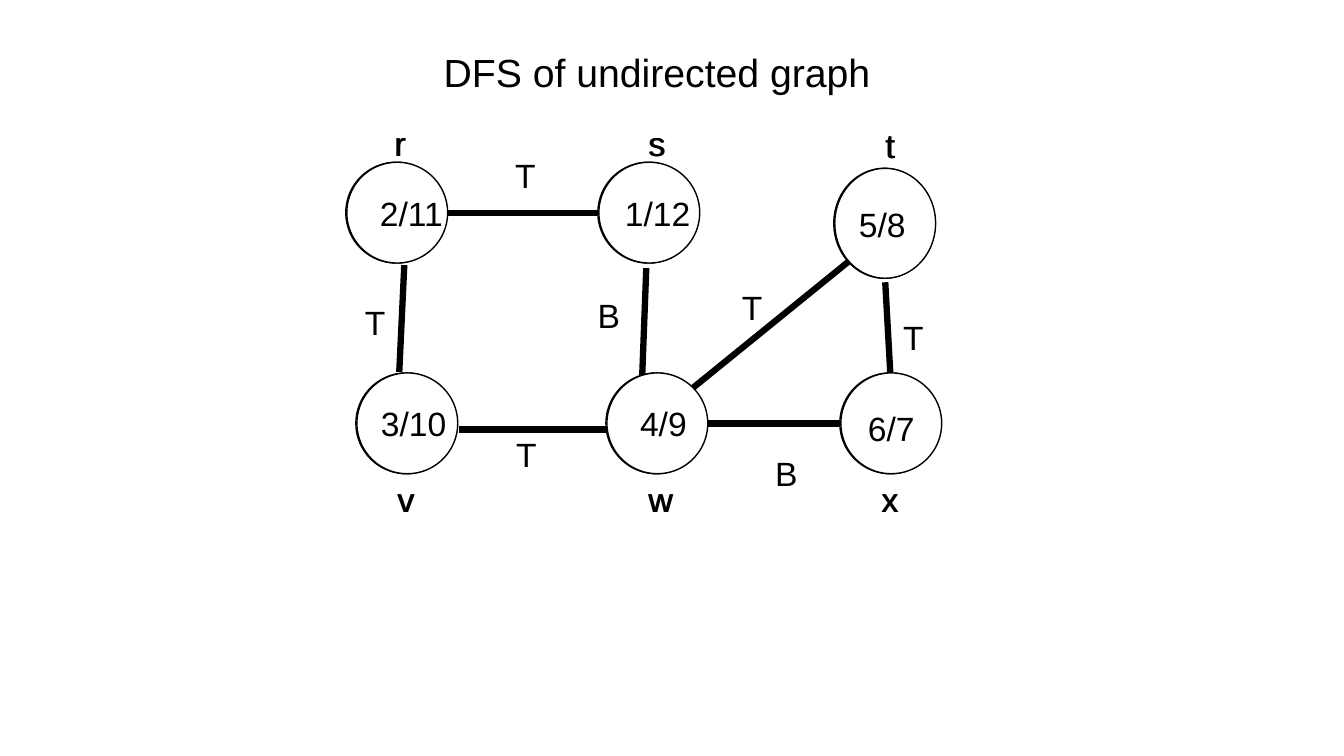
import pptx
import pptx.dml.color
import pptx.enum.shapes
import pptx.enum.text
import pptx.oxml.ns
import pptx.util
from lxml import etree

Inches, Pt = pptx.util.Inches, pptx.util.Pt
COLORS = {"ink": "000000", "paper": "FFFFFF"}
INK = pptx.dml.color.RGBColor.from_string(COLORS["ink"])
PAPER = pptx.dml.color.RGBColor.from_string(COLORS["paper"])

prs = pptx.Presentation()
prs.slide_width, prs.slide_height = Inches(13.33), Inches(7.5)
s = prs.slides.add_slide(prs.slide_layouts[5])
s.background.fill.solid()
s.background.fill.fore_color.rgb = PAPER


def set_text(sp, text, size):
    tf = sp.text_frame
    tf.text = text
    tf.word_wrap = False
    tf.auto_size = pptx.enum.text.MSO_AUTO_SIZE.SHAPE_TO_FIT_TEXT
    tf.vertical_anchor = pptx.enum.text.MSO_ANCHOR.TOP
    p = tf.paragraphs[0]
    p.alignment = pptx.enum.text.PP_ALIGN.LEFT
    r = p.runs[0]
    r.font.size, r.font.name, r.font.color.rgb = Pt(size), "Arial", INK


def add_label(text, x, y, w):
    set_text(s.shapes.add_textbox(Inches(x), Inches(y), Inches(w), Inches(0.5)), text, 24)


# Title
title = s.shapes.title
title.left, title.top = Inches(4.3), Inches(0.43)
title.width, title.height = Inches(4.49), Inches(0.57)
set_text(title, "DFS of undirected graph", 28)

# Edges: start, end, type (T tree, B back), label position
edges = [
    (4.43, 2.11, 5.92, 2.11, "T", 5.01, 1.49),
    (4.01, 2.63, 3.96, 3.69, "T", 3.52, 2.95),
    (4.55, 4.26, 6.04, 4.26, "T", 5.02, 4.26),
    (6.41, 2.66, 6.37, 3.72, "B", 5.83, 2.88),
    (6.87, 3.85, 8.41, 2.6, "T", 7.26, 2.8),
    (8.78, 2.8, 8.83, 3.7, "T", 8.86, 3.09),
    (7.01, 4.2, 8.33, 4.2, "B", 7.59, 4.44),
]
for x1, y1, x2, y2, kind, x, y in edges:
    line = s.shapes.add_connector(pptx.enum.shapes.MSO_CONNECTOR.STRAIGHT,
                                  Inches(x1), Inches(y1), Inches(x2), Inches(y2))
    line.line.color.rgb, line.line.width = INK, Pt(4.5)
    etree.SubElement(line.element.spPr, pptx.oxml.ns.qn("a:effectLst"))
    add_label(kind, x, y, 0.41 if kind == "T" else 0.43)

# Vertices: circle (left, top, height), name and discovery/finish times (left, top, width)
vertices = [
    (3.43, 1.61, 1, ("r", 3.81, 1.17, 0.31), ("2/11", 3.66, 1.86, 0.83)),
    (5.93, 1.61, 1, ("s", 6.33, 1.17, 0.37), ("1/12", 6.09, 1.86, 0.86)),
    (8.27, 1.67, 1.09, ("t", 8.68, 1.19, 0.3), ("5/8", 8.41, 1.97, 0.67)),
    (3.53, 3.7, 1, ("v", 3.84, 4.7, 0.37), ("3/10", 3.67, 3.95, 0.86)),
    (6.01, 3.7, 1, ("w", 6.33, 4.7, 0.45), ("4/9", 6.24, 3.95, 0.67)),
    (8.33, 3.7, 1, ("x", 8.64, 4.7, 0.37), ("6/7", 8.5, 4, 0.67)),
]
# Two layers, slightly offset, thicken the outlines and names
for shift in (0, 0.01):
    for x, y, h, *labels in vertices:
        sp = s.shapes.add_shape(pptx.enum.shapes.MSO_SHAPE.OVAL,
                                Inches(x + shift), Inches(y), Inches(1), Inches(h))
        sp.shadow.inherit = False
        sp.fill.solid()
        sp.fill.fore_color.rgb = PAPER
        sp.line.color.rgb, sp.line.width = INK, Pt(1)
        for text, left, top, w in labels:
            add_label(text, left + shift, top, w)

prs.save("out.pptx")
